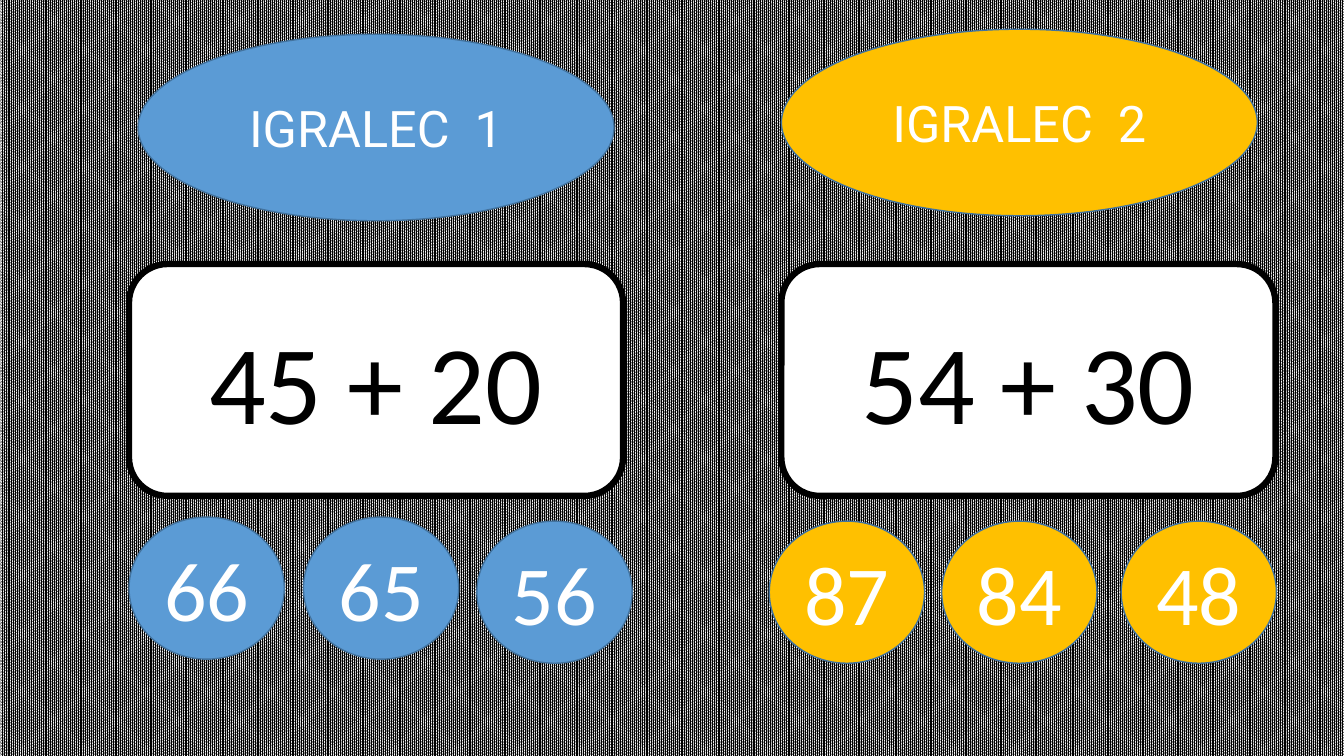
from pptx import Presentation
from pptx import util as u
from pptx.dml.color import RGBColor
from pptx.enum import dml, shapes, text

BLACK = RGBColor(0x00, 0x00, 0x00)
WHITE = RGBColor(0xFF, 0xFF, 0xFF)
BLUE = RGBColor(0x5B, 0x9B, 0xD5)
DARK_BLUE = RGBColor(0x43, 0x73, 0x9E)
GOLD = RGBColor(0xFF, 0xC0, 0x00)

PLAYERS = [
    {
        "color": BLUE,
        "name": ("IGRALEC  1", 137, 34),
        "sum": ("45 + 20", 128, 262),
        "answers": [("66", 128, 513), ("65", 301, 513), ("56", 473, 517)],
    },
    {
        "color": GOLD,
        "name": ("IGRALEC  2", 775, 29),
        "sum": ("54 + 30", 775, 262),
        "answers": [("87", 763, 517), ("84", 934, 517), ("48", 1112, 517)],
    },
]


def px(value):
    return u.Emu(value * 9144)


class GameSlide:
    name_font = {"name": "Roboto", "size": u.Pt(36)}
    sum_font = {"name": "Calibri", "size": u.Pt(80)}
    answer_font = {"name": "Calibri", "size": u.Pt(60)}

    def __init__(self, presentation):
        self.slide = presentation.slides.add_slide(presentation.slide_layouts[6])

    def background(self):
        fill = self.slide.background.fill
        fill.patterned()
        fill.pattern = dml.MSO_PATTERN.PERCENT_90
        fill.fore_color.rgb = BLACK
        fill.back_color.rgb = WHITE

    def shape(self, kind, label, box, fill, line, line_width, color, font):
        shape = self.slide.shapes.add_shape(kind, *map(px, box))
        shape.shadow.inherit = False
        shape.fill.solid()
        shape.fill.fore_color.rgb = fill
        shape.line.color.rgb = line
        shape.line.width = u.Pt(line_width)
        shape.text_frame.vertical_anchor = text.MSO_ANCHOR.MIDDLE
        paragraph = shape.text_frame.paragraphs[0]
        paragraph.alignment = text.PP_ALIGN.CENTER
        run = paragraph.add_run()
        run.text = label
        run.font.color.rgb = color
        for attribute, value in font.items():
            setattr(run.font, attribute, value)

    def ellipse(self, label, box, fill, font):
        self.shape(shapes.MSO_SHAPE.OVAL, label, box, fill, DARK_BLUE, 1, WHITE, font)

    def name(self, label, left, top, fill):
        self.ellipse(label, (left, top, 472, 185), fill, self.name_font)

    def sum_card(self, label, left, top):
        self.shape(shapes.MSO_SHAPE.ROUNDED_RECTANGLE, label, (left, top, 490, 230),
                   WHITE, BLACK, 4.5, BLACK, self.sum_font)

    def answer(self, label, left, top, fill):
        self.ellipse(label, (left, top, 154, 141), fill, self.answer_font)


def main():
    presentation = Presentation()
    presentation.slide_width = px(1333)
    presentation.slide_height = px(750)
    game = GameSlide(presentation)
    game.background()
    for player in PLAYERS:
        game.sum_card(*player["sum"])
        game.name(*player["name"], player["color"])
        for answer in player["answers"]:
            game.answer(*answer, player["color"])
    presentation.save("out.pptx")


if __name__ == "__main__":
    main()
